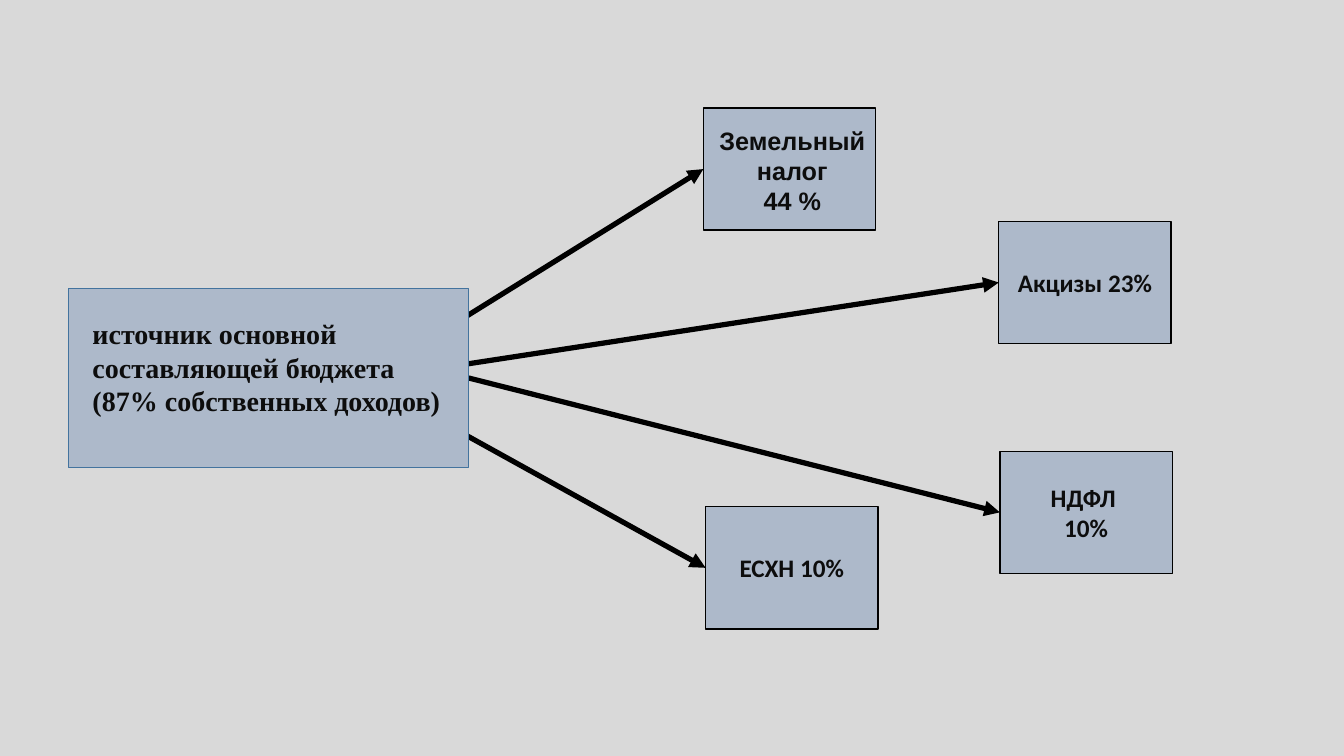
from lxml import etree
from pptx import Presentation
from pptx import util as u
from pptx.dml import color
from pptx.enum import shapes, text
from pptx.oxml import ns

Pt = u.Pt
BOX_W, BOX_H = 123.2, 87.2
FILL, INK, BLACK = "ADB9CA", "0D0D0D", "000000"


def rgb(value):
    """Turn a hex string into a colour."""
    return color.RGBColor.from_string(value)


def write(sp, content, size=18, font="Calibri", align=text.PP_ALIGN.CENTER,
          anchor=text.MSO_ANCHOR.MIDDLE):
    """Fill a shape with bold text, one paragraph per line."""
    tf = sp.text_frame
    tf.word_wrap = True
    tf.vertical_anchor = anchor
    tf.text = content
    for p in tf.paragraphs:
        p.alignment = align
        for r in p.runs:
            r.font.name = font
            r.font.size = Pt(size)
            r.font.bold = True
            r.font.color.rgb = rgb(INK)


def add_box(slide, x, y, w=BOX_W, h=BOX_H, line=BLACK):
    """Draw a filled rectangle with a thin outline."""
    sp = slide.shapes.add_shape(shapes.MSO_SHAPE.RECTANGLE, Pt(x), Pt(y), Pt(w), Pt(h))
    sp.shadow.inherit = False
    sp.fill.solid()
    sp.fill.fore_color.rgb = rgb(FILL)
    sp.line.color.rgb = rgb(line)
    sp.line.width = Pt(1)
    return sp


def add_label(slide, x, y, w, h, content, **fmt):
    """Place a text box that grows with its text."""
    sp = slide.shapes.add_textbox(Pt(x), Pt(y), Pt(w), Pt(h))
    write(sp, content, anchor=text.MSO_ANCHOR.TOP, **fmt)
    sp.text_frame.auto_size = text.MSO_AUTO_SIZE.SHAPE_TO_FIT_TEXT


def add_arrow(slide, x1, y1, x2, y2):
    """Draw a thick black line with a triangle at its end."""
    sp = slide.shapes.add_connector(
        shapes.MSO_CONNECTOR.STRAIGHT, Pt(x1), Pt(y1), Pt(x2), Pt(y2))
    sp.line.color.rgb = rgb(BLACK)
    sp.line.width = Pt(3.75)
    etree.SubElement(sp.line._get_or_add_ln(), ns.qn("a:tailEnd"), type="triangle")
    etree.SubElement(sp._element.spPr, ns.qn("a:effectLst"))


def main():
    """Build the slide of income sources."""
    prs = Presentation()
    prs.slide_width, prs.slide_height = Pt(960), Pt(540)
    slide = prs.slides.add_slide(prs.slide_layouts[6])
    slide.background.fill.solid()
    slide.background.fill.fore_color.rgb = rgb("D9D9D9")

    taxes = [
        (714.2, 322.4, 334.8, 270, "НДФЛ \n10%"),
        (713.4, 158.2, 334.8, 259.8, "Акцизы 23%"),
        (502.4, 77.2, 334, 225.4, ""),
        (504, 362, 309.6, 298, "ЕСХН 10%"),
    ]
    for x, y, start_x, start_y, _ in taxes:
        add_arrow(slide, start_x, start_y, x, y + BOX_H / 2)
    add_box(slide, 48.8, 206, 286, 128, line="43739E")
    add_label(slide, 59, 222.5, 283, 80,
              "источник основной \vсоставляющей бюджета\v(87% собственных доходов)",
              size=20, font="Times New Roman", align=text.PP_ALIGN.LEFT)
    for x, y, _, _, name in taxes:
        sp = add_box(slide, x, y)
        if name:
            write(sp, name)
    add_label(slide, 489.6, 85.7, 152.6, 72.7, "Земельный налог\n44 %", font="Arial")
    prs.save("out.pptx")


if __name__ == "__main__":
    main()
